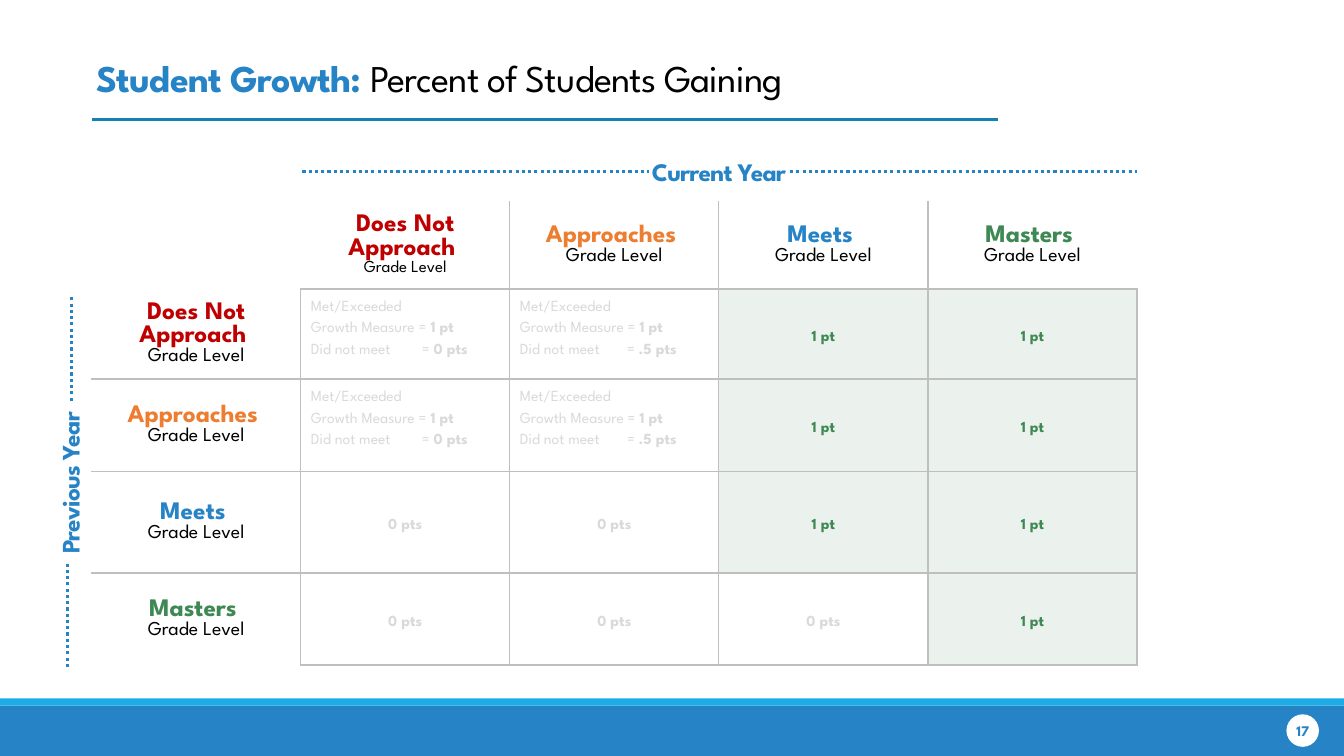
from lxml import etree
from pptx import Presentation
from pptx.dml.color import RGBColor
from pptx.enum import dml, shapes, text
from pptx.oxml.ns import qn
from pptx.util import Cm, Pt

FONT = "League Spartan"
BLUE = RGBColor(0x26, 0x83, 0xC6)
SKY = RGBColor(0x1C, 0xAD, 0xE4)
TEAL = RGBColor(0x14, 0x82, 0xAC)
RED = RGBColor(0xC0, 0x00, 0x00)
ORANGE = RGBColor(0xED, 0x7D, 0x31)
GREEN = RGBColor(0x3E, 0x88, 0x53)
GREY = RGBColor(0xBF, 0xBF, 0xBF)
PALE = RGBColor(0xD9, 0xD9, 0xD9)
BLACK = RGBColor(0, 0, 0)
WHITE = RGBColor(0xFF, 0xFF, 0xFF)

LEVELS = [("Does Not Approach ", RED), ("Approaches ", ORANGE),
          ("Meets ", BLUE), ("Masters ", GREEN)]
POINTS = [[("0 pts", 2.8), (".5 pts", 2.7), "1 pt", "1 pt"],
          [("0 pts", 2.8), (".5 pts", 2.7), "1 pt", "1 pt"],
          ["0 pts", "0 pts", "1 pt", "1 pt"],
          ["0 pts", "0 pts", "0 pts", "1 pt"]]
ROWS = [2.2, 2.27, 2.34, 2.55, 2.32]
COL = 5.27


def add_run(para, words, size, color, bold=False, space=0):
    """Add one formatted run to a paragraph."""
    run = para.add_run()
    run.text = words
    font = run.font
    font.name, font.size, font.bold = FONT, Pt(size), bold
    font.color.rgb = color
    if space:
        font._element.set("spc", str(space))


def add_line(slide, x1, y1, x2, y2, color, dots=False):
    """Draw a plain or dotted straight line."""
    line = slide.shapes.add_connector(
        shapes.MSO_CONNECTOR.STRAIGHT, Cm(x1), Cm(y1), Cm(x2), Cm(y2))
    line.line.color.rgb = color
    line.line.width = Pt(2.25)
    if dots:
        line.line.dash_style = dml.MSO_LINE.ROUND_DOT
    etree.SubElement(line._element.spPr, qn("a:effectLst"))


def add_form(slide, kind, x, y, w, h, color):
    """Draw a filled shape without outline or shadow."""
    form = slide.shapes.add_shape(kind, Cm(x), Cm(y), Cm(w), Cm(h))
    form.shadow.inherit = False
    form.fill.solid()
    form.fill.fore_color.rgb = color
    form.line.fill.background()
    return form


def add_title(slide, x, y, w, h):
    """Fill the title placeholder and rule a line below it."""
    title = slide.shapes.title
    title.left, title.top, title.width, title.height = Cm(x), Cm(y), Cm(w), Cm(h)
    frame = title.text_frame
    frame.auto_size = text.MSO_AUTO_SIZE.NONE
    frame.vertical_anchor = text.MSO_ANCHOR.MIDDLE
    para = frame.paragraphs[0]
    para.alignment = text.PP_ALIGN.LEFT
    add_run(para, "Student Growth: ", 27, BLUE, True, -50)
    add_run(para, "Percent of Students Gaining", 27, BLACK, False, -50)
    add_line(slide, x + 0.13, y + 1.88, x + 22.97, y + 1.88, TEAL)


def add_axis(slide, words, x, y, w, h, turn=0):
    """Place a centred axis label, turned if asked."""
    box = slide.shapes.add_textbox(Cm(x), Cm(y), Cm(w), Cm(h))
    box.rotation = turn
    frame = box.text_frame
    frame.word_wrap = True
    frame.vertical_anchor = text.MSO_ANCHOR.MIDDLE
    para = frame.paragraphs[0]
    para.alignment = text.PP_ALIGN.CENTER
    add_run(para, words, 18, BLUE, True, -50)


def add_years(slide, x, y, w, h):
    """Label the two axes of the grid whose box is given."""
    left = x + COL
    add_axis(slide, "Current Year", left, y - 1.35, w - COL, 1.19)
    add_line(slide, left + 0.04, y - 0.76, left + 8.78, y - 0.76, BLUE, True)
    add_line(slide, left + 12.33, y - 0.76, x + w, y - 0.76, BLUE, True)
    add_axis(slide, "Previous Year", x - 5.32, y + 6.49, 9.53, 1.19, 270)
    add_line(slide, x - 0.51, y + 2.41, x - 0.51, y + 5.05, BLUE, True)
    add_line(slide, x - 0.61, y + 9.12, x - 0.61, y + h + 0.08, BLUE, True)


def add_edges(cell, row, col):
    """Border a cell in grey, with white where the grid is open."""
    white = {"L": col == 0 or (row == 0 and col == 1),
             "R": row == 0 and col in (0, 4),
             "T": row == 0 or (col == 0 and row == 1),
             "B": col == 0 and row in (0, 4)}
    props = cell._tc.get_or_add_tcPr()
    for side, blank in white.items():
        edge = etree.SubElement(props, qn("a:ln" + side), w="12700")
        fill = etree.SubElement(edge, qn("a:solidFill"))
        etree.SubElement(fill, qn("a:srgbClr"), val=str(WHITE if blank else GREY))


def next_para(frame, first):
    """Return the opening paragraph or a new one."""
    return frame.paragraphs[0] if first else frame.add_paragraph()


def fill_level(cell, level, size):
    """Write a level name above its caption."""
    name, color = level
    cell.vertical_anchor = text.MSO_ANCHOR.MIDDLE
    lines = [(name, 18, color, True), ("Grade Level", size, BLACK, False)]
    for i, line in enumerate(lines):
        para = next_para(cell.text_frame, i == 0)
        para.alignment = text.PP_ALIGN.CENTER
        add_run(para, *line)


def fill_rule(cell, score, stop):
    """Write the growth rule with its two scores."""
    lines = [("Met/Exceeded", ""), ("Growth Measure = ", "1 pt"),
             ("Did not meet\t= ", score)]
    for i, (words, mark) in enumerate(lines):
        para = next_para(cell.text_frame, i == 0)
        if "\t" in words:
            tabs = etree.SubElement(para._p.get_or_add_pPr(), qn("a:tabLst"))
            etree.SubElement(tabs, qn("a:tab"), pos=str(Cm(stop)), algn="l")
        para.line_spacing = 1.5
        add_run(para, words, 11, PALE)
        if mark:
            add_run(para, mark, 11, PALE, True)


def fill_score(cell, score):
    """Write one score, on a green tint when it earns a point."""
    gain = score == "1 pt"
    cell.vertical_anchor = text.MSO_ANCHOR.MIDDLE
    para = cell.text_frame.paragraphs[0]
    para.alignment = text.PP_ALIGN.CENTER
    para.line_spacing = 1.5
    add_run(para, score, 11, GREEN if gain else PALE, True)
    if gain:
        cell.fill.solid()
        cell.fill.fore_color.rgb = GREEN
        tint = cell._tc.tcPr.find(qn("a:solidFill")).find(qn("a:srgbClr"))
        etree.SubElement(tint, qn("a:alpha"), val="10000")


def add_grid(slide, x, y, w, h):
    """Build the table of points by previous and current level."""
    grid = slide.shapes.add_table(5, 5, Cm(x), Cm(y), Cm(w), Cm(h)).table
    grid.first_row = grid.horz_banding = False
    for col in grid.columns:
        col.width = Cm(w / 5)
    for r, high in enumerate(ROWS):
        grid.rows[r].height = Cm(high)
        for c in range(5):
            cell = grid.cell(r, c)
            add_edges(cell, r, c)
            cell.fill.background()
            if r and c:
                score = POINTS[r - 1][c - 1]
                if isinstance(score, tuple):
                    fill_rule(cell, *score)
                else:
                    fill_score(cell, score)
            elif r or c:
                fill_level(cell, LEVELS[r + c - 1], 12 if (r, c) == (0, 1) else 14)


def add_foot(slide, x, y, w, h):
    """Draw the footer bands and the page number."""
    rect = shapes.MSO_SHAPE.RECTANGLE
    add_form(slide, rect, x, y + 0.18, w, h - 0.18, BLUE)
    add_form(slide, rect, x, y, w, 0.18, SKY)
    disc = add_form(slide, shapes.MSO_SHAPE.OVAL, x + w - 1.45, y + 0.4, 0.82, 0.82, WHITE)
    frame = disc.text_frame
    frame.margin_left = frame.margin_right = frame.margin_top = frame.margin_bottom = 0
    frame.word_wrap = False
    frame.vertical_anchor = text.MSO_ANCHOR.MIDDLE
    para = frame.paragraphs[0]
    para.alignment = text.PP_ALIGN.CENTER
    add_run(para, "17", 10.5, BLUE, True)


def main():
    """Build the slide and save it."""
    deck = Presentation()
    deck.slide_width, deck.slide_height = Cm(33.87), Cm(19.05)
    slide = deck.slides.add_slide(deck.slide_layouts[5])
    area = (2.31, 5.08, 5 * COL, sum(ROWS))
    add_foot(slide, 0, 17.6, 33.87, 1.45)
    add_title(slide, 2.18, 1.14, 23.47, 1.6)
    add_grid(slide, *area)
    add_years(slide, *area)
    deck.save("out.pptx")


if __name__ == "__main__":
    main()
